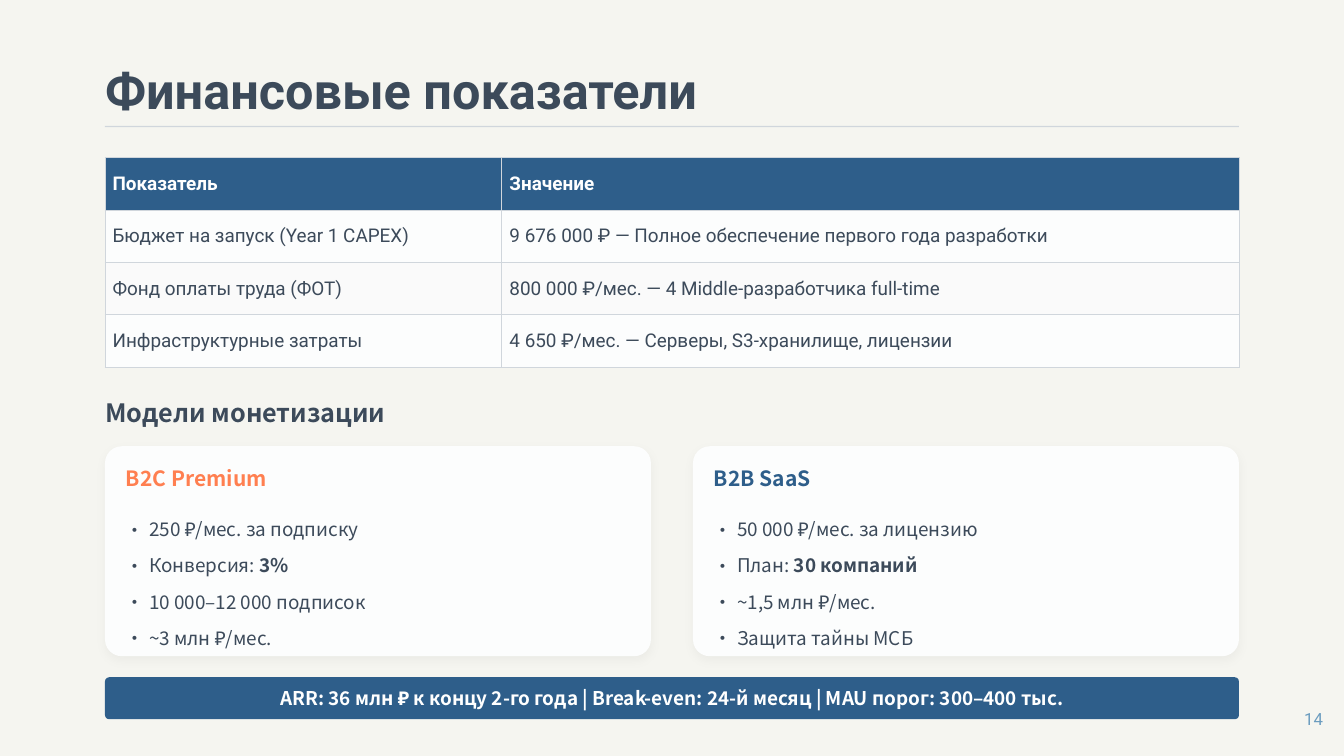
from dataclasses import dataclass

from lxml import etree
from pptx import Presentation
from pptx.dml.color import RGBColor
from pptx.enum import shapes, text
from pptx.oxml import ns
from pptx.util import Pt


@dataclass(frozen=True)
class Theme:
    background: str = "F5F5F0"
    ink: str = "3C4A5A"
    blue: str = "2E5E8A"
    coral: str = "FF7F50"
    white: str = "FFFFFF"
    card: str = "FCFDFD"
    stripe: str = "FAFAFA"
    line: str = "D0D6DC"
    page: str = "6B9CBF"
    heading_font: str = "Roboto"
    body_font: str = "Noto Sans CJK SC"
    title_size: int = 48
    section_size: int = 24
    card_size: int = 20
    body_size: int = 18
    page_size: int = 16


THEME = Theme()
LEFT, WIDTH = 100, 1080
CARD_GAP = 40

ROWS = [
    ("Показатель", "Значение"),
    ("Бюджет на запуск (Year 1 CAPEX)", "9 676 000 ₽ — Полное обеспечение первого года разработки"),
    ("Фонд оплаты труда (ФОТ)", "800 000 ₽/мес. — 4 Middle-разработчика full-time"),
    ("Инфраструктурные затраты", "4 650 ₽/мес. — Серверы, S3-хранилище, лицензии"),
]
# Each bullet is a plain part and a bold part.
CARDS = [
    ("B2C Premium", THEME.coral, [
        ("250 ₽/мес. за подписку", ""), ("Конверсия: ", "3%"),
        ("10 000–12 000 подписок", ""), ("~3 млн ₽/мес.", "")]),
    ("B2B SaaS", THEME.blue, [
        ("50 000 ₽/мес. за лицензию", ""), ("План: ", "30 компаний"),
        ("~1,5 млн ₽/мес.", ""), ("Защита тайны МСБ", "")]),
]
SUMMARY = "ARR: 36 млн ₽ к концу 2-го года | Break-even: 24-й месяц | MAU порог: 300–400 тыс."


def points(box):
    return [Pt(length) for length in box]


def add_xml(parent, tag, **attributes):
    return etree.SubElement(parent, ns.qn(tag), attributes)


def set_format(target, values):
    for name, value in values.items():
        setattr(target, name, value)


def format_font(font, size, color, name=THEME.body_font, bold=False):
    set_format(font, {"size": Pt(size), "name": name, "bold": bold})
    font.color.rgb = RGBColor.from_string(color)


def format_frame(frame, anchor=text.MSO_ANCHOR.MIDDLE, wrap=True):
    set_format(frame, {
        "margin_left": 0, "margin_right": 0, "margin_top": 0, "margin_bottom": 0,
        "vertical_anchor": anchor, "word_wrap": wrap, "auto_size": text.MSO_AUTO_SIZE.NONE})


def write_line(shape, words, alignment=text.PP_ALIGN.LEFT, wrap=True, **font):
    format_frame(shape.text_frame, wrap=wrap)
    paragraph = shape.text_frame.paragraphs[0]
    set_format(paragraph, {"text": words, "alignment": alignment})
    format_font(paragraph.font, **font)


def add_label(slide, box, words, **options):
    write_line(slide.shapes.add_textbox(*points(box)), words, **options)


def add_panel(slide, box, color, radius=None):
    """Add a filled rectangle without outline, rounded when a radius ratio is given."""
    kind = shapes.MSO_SHAPE.RECTANGLE if radius is None else shapes.MSO_SHAPE.ROUNDED_RECTANGLE
    panel = slide.shapes.add_shape(kind, *points(box))
    if radius is not None:
        panel.adjustments[0] = radius
    panel.shadow.inherit = False
    panel.fill.solid()
    panel.fill.fore_color.rgb = RGBColor.from_string(color)
    panel.line.fill.background()
    return panel


def add_soft_shadow(shape):
    effects = shape.element.spPr.find(ns.qn("a:effectLst"))
    shadow = add_xml(effects, "a:outerShdw", blurRad=str(Pt(10)), dist=str(Pt(4)),
                     dir="5400000", algn="ctr", rotWithShape="0")
    color = add_xml(shadow, "a:srgbClr", val="000000")
    add_xml(color, "a:alpha", val="3000")


def add_header(slide, box, words):
    left, top, width, height = box
    title = slide.shapes.title
    set_format(title, dict(zip(("left", "top", "width", "height"),
                               points((left, top, 800, height - 10)))))
    write_line(title, words, size=THEME.title_size, color=THEME.ink,
               name=THEME.heading_font, bold=True)
    add_panel(slide, (left, top + height, width, 1), THEME.line)


def add_borders(cell):
    properties = cell._tc.get_or_add_tcPr()
    for side in ("a:lnL", "a:lnR", "a:lnT", "a:lnB"):
        border = add_xml(properties, side, w=str(Pt(1)))
        fill = add_xml(border, "a:solidFill")
        add_xml(fill, "a:srgbClr", val=THEME.line)


def add_metrics_table(slide, box):
    table = slide.shapes.add_table(len(ROWS), len(ROWS[0]), *points(box)).table
    set_format(table, {"first_row": False, "horz_banding": False})
    for column, share in zip(table.columns, (0.35, 0.65)):
        column.width = Pt(box[2] * share)
    for index, row in enumerate(ROWS):
        table.rows[index].height = Pt(box[3] / len(ROWS))
        header = index == 0
        fill = THEME.blue if header else (THEME.stripe, THEME.card)[index % 2]
        for cell, words in zip(table.rows[index].cells, row):
            add_borders(cell)
            cell.fill.solid()
            cell.fill.fore_color.rgb = RGBColor.from_string(fill)
            set_format(cell, {
                "text": words, "vertical_anchor": text.MSO_ANCHOR.MIDDLE,
                "margin_left": Pt(7.2), "margin_right": Pt(7.2),
                "margin_top": 0, "margin_bottom": 0})
            format_font(cell.text_frame.paragraphs[0].runs[0].font, THEME.body_size,
                        THEME.white if header else THEME.ink, THEME.heading_font, header)


def add_bullet(paragraph, indent=22):
    properties = paragraph._p.get_or_add_pPr()
    set_format(paragraph, {"line_spacing": 1.6})
    properties.set("marL", str(Pt(indent)))
    properties.set("indent", str(-Pt(indent)))
    add_xml(properties, "a:buFont", typeface=THEME.body_font)
    add_xml(properties, "a:buChar", char="•")


def add_card(slide, box, heading, color, bullets):
    left, top, width, height = box
    add_soft_shadow(add_panel(slide, box, THEME.card, 0.08))
    add_label(slide, (left + 20, top + 15, 200, 30), heading,
              size=THEME.card_size, color=color, bold=True)
    body = slide.shapes.add_textbox(*points((left + 20, top + 55, width - 40, height - 60)))
    frame = body.text_frame
    format_frame(frame, anchor=text.MSO_ANCHOR.TOP)
    for index, parts in enumerate(bullets):
        paragraph = frame.add_paragraph() if index else frame.paragraphs[0]
        add_bullet(paragraph)
        for words, bold in zip(parts, (False, True)):
            if words:
                run = paragraph.add_run()
                run.text = words
                format_font(run.font, THEME.body_size, THEME.ink, bold=bold)


def add_cards(slide, box):
    left, top, width, height = box
    card_width = (width - CARD_GAP * (len(CARDS) - 1)) / len(CARDS)
    for index, card in enumerate(CARDS):
        card_left = left + index * (card_width + CARD_GAP)
        add_card(slide, (card_left, top, card_width, height), *card)


def add_summary(slide, box):
    write_line(add_panel(slide, box, THEME.blue, 0.1), SUMMARY, text.PP_ALIGN.CENTER,
               wrap=False, size=THEME.body_size, color=THEME.white, bold=True)


def main():
    presentation = Presentation()
    set_format(presentation, {"slide_width": Pt(1280), "slide_height": Pt(720)})
    slide = presentation.slides.add_slide(presentation.slide_layouts[5])
    slide.background.fill.solid()
    slide.background.fill.fore_color.rgb = RGBColor.from_string(THEME.background)

    add_header(slide, (LEFT, 60, WIDTH, 60), "Финансовые показатели")
    add_metrics_table(slide, (LEFT, 150, WIDTH, 200))
    add_label(slide, (LEFT, 375, 500, 36), "Модели монетизации",
              size=THEME.section_size, color=THEME.ink, bold=True)
    add_cards(slide, (LEFT, 425, WIDTH, 200))
    add_summary(slide, (LEFT, 645, WIDTH, 40))
    add_label(slide, (LEFT + WIDTH, 670, 80, 30), "14", alignment=text.PP_ALIGN.RIGHT,
              size=THEME.page_size, color=THEME.page, name=THEME.heading_font)
    presentation.save("out.pptx")


if __name__ == "__main__":
    main()
